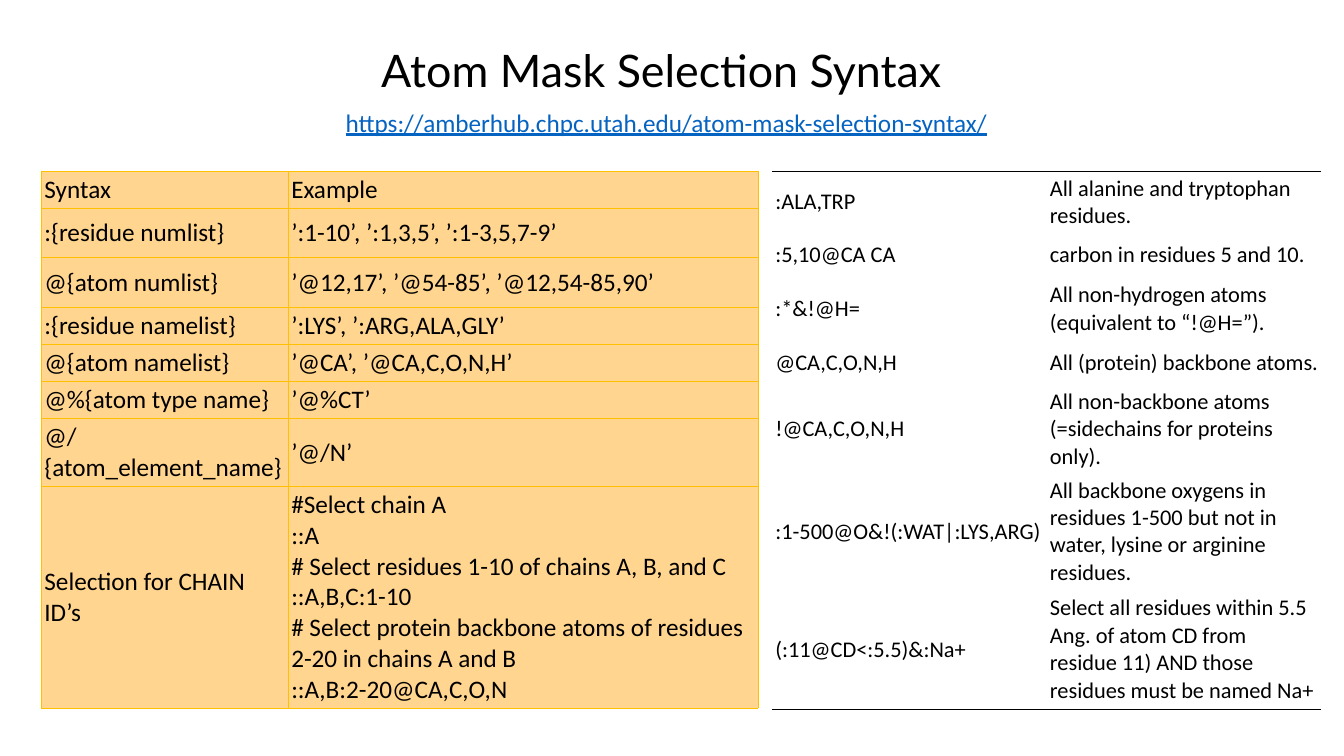
from dataclasses import dataclass
from lxml.etree import SubElement
from pptx import Presentation
from pptx.dml.color import RGBColor
from pptx.enum.text import MSO_ANCHOR, MSO_AUTO_SIZE, PP_ALIGN
from pptx.oxml.ns import qn
from pptx.util import Cm, Pt

COLORS = {"ink": "000000", "link": "0563C1", "gold": "FFC000", "sand": "FFD58F"}
INSET = Cm(0.08)
PLAIN = "{2D5ABB26-0587-4C30-8999-92F81FD0307C}"  # no style, no grid


@dataclass
class Label:
    text: str
    box: tuple[float, float, float, float]
    size: int
    font: str
    color: str
    align: PP_ALIGN = PP_ALIGN.LEFT
    line: bool = False


@dataclass
class Grid:
    left: float
    tall: float
    cols: list[float]
    rows: list[tuple[float, str, str]]
    size: int
    edge: str
    width: float
    fill: str | None = None
    boxed: bool = False  # lines round every cell, or only above and below


def write(para, text: str, size: int, font: str, color: str, line: bool = False) -> None:
    for i, part in enumerate(text.split("\n")):
        if i:
            para.add_line_break()
        run = para.add_run()
        run.text = part
        run.font.size = Pt(size)
        run.font.name = font
        run.font.color.rgb = RGBColor.from_string(COLORS[color])
        if line:
            run.font.underline = True


def add_label(slide, label: Label) -> None:
    frame = slide.shapes.add_textbox(*map(Cm, label.box)).text_frame
    frame.word_wrap = True
    frame.auto_size = MSO_AUTO_SIZE.SHAPE_TO_FIT_TEXT
    para = frame.paragraphs[0]
    para.alignment = label.align
    write(para, label.text, label.size, label.font, label.color, label.line)


def add_edges(cell, sides: str, color: str, width: float) -> None:
    props = cell._tc.get_or_add_tcPr()
    for i, side in enumerate(sides):
        edge = SubElement(props, qn(f"a:ln{side}"), w=str(Pt(width)))
        solid = SubElement(edge, qn("a:solidFill"))
        SubElement(solid, qn("a:srgbClr"), val=COLORS[color])
        props.insert(i, edge)  # lines come before the fill


def add_grid(slide, grid: Grid) -> None:
    count = len(grid.rows)
    shape = slide.shapes.add_table(count, len(grid.cols), Cm(grid.left), Cm(4.32),
                                   Cm(sum(grid.cols)), Cm(grid.tall))
    table = shape.table
    table.first_row = table.horz_banding = False
    table._tbl.tblPr.find(qn("a:tableStyleId")).text = PLAIN
    for col, width in zip(table.columns, grid.cols):
        col.width = Cm(width)
    for r, (height, *texts) in enumerate(grid.rows):
        table.rows[r].height = Cm(height)
        ends = ("T" if r == 0 else "") + ("B" if r == count - 1 else "")
        for c, text in enumerate(texts):
            cell = table.cell(r, c)
            cell.vertical_anchor = MSO_ANCHOR.MIDDLE
            cell.margin_left = cell.margin_right = INSET
            cell.margin_top = cell.margin_bottom = INSET
            if grid.fill:
                cell.fill.solid()
                cell.fill.fore_color.rgb = RGBColor.from_string(COLORS[grid.fill])
            else:
                cell.fill.background()
            add_edges(cell, "LRTB" if grid.boxed else ends, grid.edge, grid.width)
            write(cell.text_frame.paragraphs[0], text, grid.size, "Calibri", "ink")
    shape.height = Cm(grid.tall)


SYNTAX = Grid(1.04, 13.44, [6.22, 11.84], [
    (0.71, "Syntax", "Example"),
    (1.24, ":{residue numlist}", "’:1-10’, ’:1,3,5’, ’:1-3,5,7-9’"),
    (1.24, "@{atom numlist}", "’@12,17’, ’@54-85’, ’@12,54-85,90’"),
    (0.71, ":{residue namelist}", "’:LYS’, ’:ARG,ALA,GLY’"),
    (0.71, "@{atom namelist}", "’@CA’, ’@CA,C,O,N,H’"),
    (0.71, "@%{atom type name}", "’@%CT’"),
    (1.24, "@/{atom_element_name}", "’@/N’"),
    (5.54, "Selection for CHAIN ID’s",
     "#Select chain A\n::A\n# Select residues 1-10 of chains A, B, and C\n::A,B,C:1-10\n"
     "# Select protein backbone atoms of residues 2-20 in chains A and B\n"
     "::A,B:2-20@CA,C,O,N"),
], 18, "gold", 0.5, "sand", True)

SAMPLES = Grid(19.46, 13.79, [6.92, 6.92], [
    (1.12, ":ALA,TRP", "All alanine and tryptophan residues."),
    (1.12, ":5,10@CA CA", "carbon in residues 5 and 10."),
    (1.6, ":*&!@H=", "All non-hydrogen atoms (equivalent to “!@H=”)."),
    (1.12, "@CA,C,O,N,H", "All (protein) backbone atoms."),
    (1.6, "!@CA,C,O,N,H", "All non-backbone atoms (=sidechains for proteins only)."),
    (2.54, ":1-500@O&!(:WAT|:LYS,ARG)",
     "All backbone oxygens in residues 1-500 but not in water, lysine or arginine\nresidues."),
    (3.02, "(:11@CD<:5.5)&:Na+",
     "Select all residues within 5.5 Ang. of atom CD from residue 11) "
     "AND those residues must be named Na+"),
], 16, "ink", 1)

LABELS = [
    Label("Atom Mask Selection Syntax", (8.2, 0.94, 16.94, 1.63), 32, "Lato", "ink",
          PP_ALIGN.CENTER),
    Label("https://amberhub.chpc.utah.edu/atom-mask-selection-syntax/",
          (8.46, 2.57, 16.94, 1.02), 18, "Calibri", "link", line=True),
]


def main() -> None:
    deck = Presentation()
    deck.slide_width, deck.slide_height = Cm(33.87), Cm(19.05)
    slide = deck.slides.add_slide(deck.slide_layouts[6])
    # Tables
    for grid in (SYNTAX, SAMPLES):
        add_grid(slide, grid)
    # Title and web address
    for label in LABELS:
        add_label(slide, label)
    deck.save("out.pptx")


if __name__ == "__main__":
    main()
